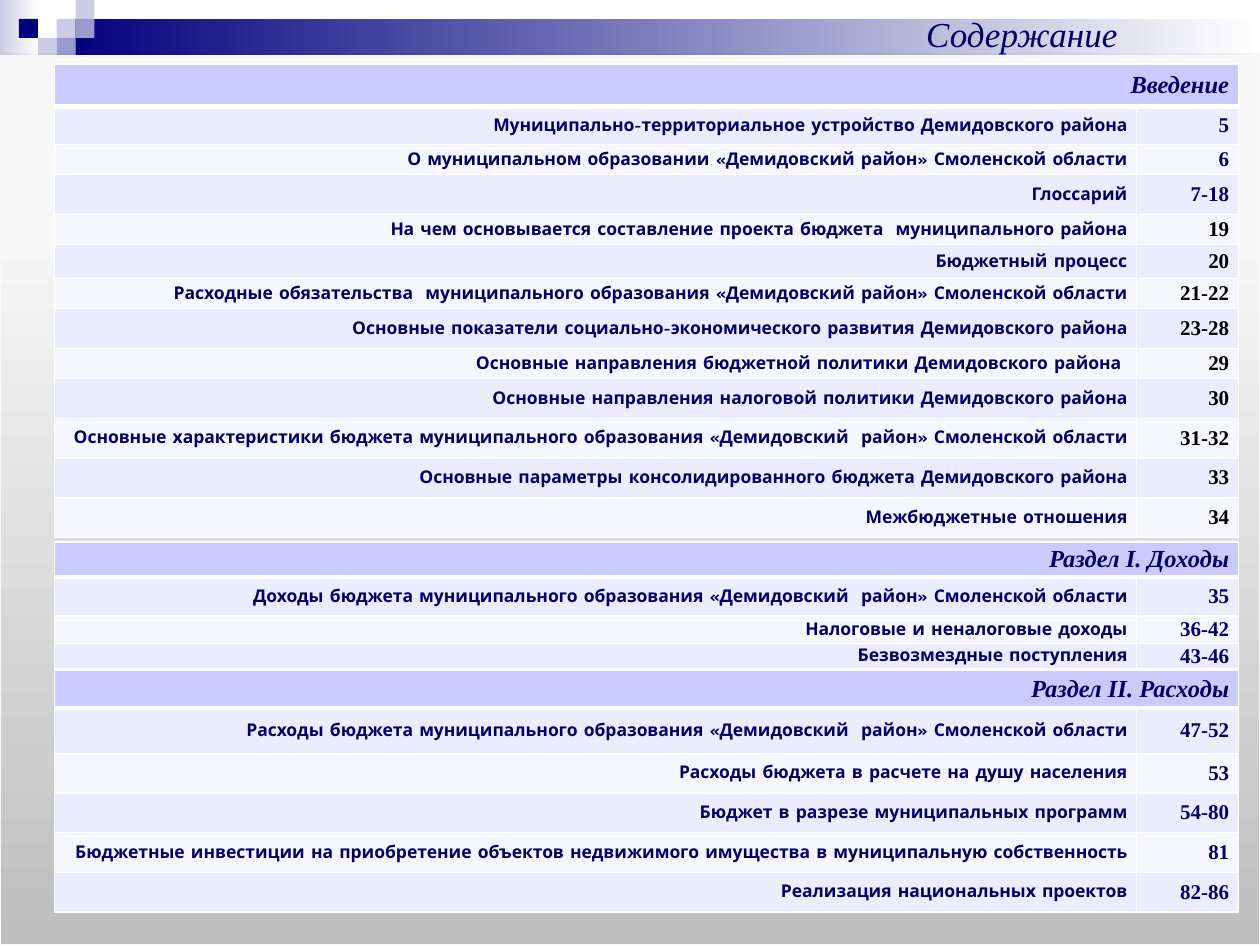
from lxml import etree
from pptx import Presentation
from pptx.dml.color import RGBColor
from pptx.enum import shapes, text
from pptx.oxml import parse_xml
from pptx.oxml.ns import nsdecls, qn
from pptx.util import Pt

NAVY, BLACK, WHITE = "000066", "000000", "FFFFFF"
SERIF, HAND = "Times New Roman", "Comic Neue"
HEADER, BANDS = "CACAFF", ("ECECFF", "F6F6FF")

INTRO = [
    ("Муниципально-территориальное устройство Демидовского района", "5", 21.6),
    ("О муниципальном образовании «Демидовский район» Смоленской области", "6", 17.3),
    ("Глоссарий", "7-18", 22.7),
    ("На чем основывается составление проекта бюджета  муниципального района", "19", 17.3),
    ("Бюджетный процесс", "20", 19.4),
    ("Расходные обязательства  муниципального образования «Демидовский район» "
     "Смоленской области", "21-22", 17.3),
    ("Основные показатели социально-экономического развития Демидовского района",
     "23-28", 22.7),
    ("Основные направления бюджетной политики Демидовского района ", "29", 17.3),
    ("Основные направления налоговой политики Демидовского района", "30", 22.7),
    ("Основные характеристики бюджета муниципального образования «Демидовский  район» "
     "Смоленской области", "31-32", 22.7),
    ("Основные параметры консолидированного бюджета Демидовского района", "33", 22.7),
    ("Межбюджетные отношения", "34", 22.7),
]
INCOME = [
    ("Доходы бюджета муниципального образования «Демидовский  район» Смоленской области",
     "35", 22.2),
    ("Налоговые и неналоговые доходы", "36-42", 15.8),
    ("Безвозмездные поступления", "43-46", 13.9),
]
SPENDING = [
    ("Расходы бюджета муниципального образования «Демидовский  район» Смоленской области",
     "47-52", 25.9),
    ("Расходы бюджета в расчете на душу населения", "53", 22.7),
    ("Бюджет в разрезе муниципальных программ", "54-80", 22.7),
    ("Бюджетные инвестиции на приобретение объектов недвижимого имущества "
     "в муниципальную собственность", "81", 22.7),
    ("Реализация национальных проектов", "82-86", 22.7),
]


def rgb(hex_color):
    return RGBColor.from_string(hex_color)


def add_run(p, words, size, font, color, bold=False, italic=False):
    r = p.add_run()
    r.text = words
    f = r.font
    f.size, f.name, f.bold, f.italic = Pt(size), font, bold, italic
    f.color.rgb = rgb(color)


def add_box(s, box, color=None, kind=shapes.MSO_SHAPE.RECTANGLE):
    sp = s.shapes.add_shape(kind, *map(Pt, box))
    sp.shadow.inherit = False
    sp.line.fill.background()
    if color:
        sp.fill.solid()
        sp.fill.fore_color.rgb = rgb(color)
    return sp


def fill_gradient(sp, stops, angle=0):
    sp.fill.gradient()
    sp.fill.gradient_angle = angle
    gs_list = sp._element.spPr.find(qn("a:gradFill")).find(qn("a:gsLst"))
    for gs in list(gs_list):
        gs_list.remove(gs)
    for pos, color in stops:
        gs = etree.SubElement(gs_list, qn("a:gs"), pos=str(pos * 1000))
        etree.SubElement(gs, qn("a:srgbClr"), val=color)


def banner(s, left, top, width, height):
    # Fading strips
    fill_gradient(add_box(s, (left, top, 22.3, height)), [(0, "CCCCE6"), (100, WHITE)])
    fill_gradient(add_box(s, (left + 32.4, top + 10.8, width - 32.4, 21.6)),
                  [(0, "00007D"), (100, WHITE)])
    # Mosaic squares: column, row, colour
    side = 10.8
    for col, row, color in [(3, 1, "CCCCE6"), (4, 0, "CCCCE6"), (4, 1, "9999CC"),
                            (2, 2, "CCCCE6"), (1, 1, "00007D"), (3, 2, "9999CC"),
                            (2, 3, "9999CC")]:
        add_box(s, (left + col * side, top + row * side, side, side), color)


def panel(s, *box):
    sp = add_box(s, box, kind=shapes.MSO_SHAPE.FLOWCHART_PROCESS)
    fill_gradient(sp, [(0, "BEBEBE"), (80, "F7F7F7"), (100, "F8F8F8")], 90)
    sp.line.color.rgb = rgb("F9F9F9")
    sp.line.width = Pt(0.75)
    # Soft shadow below
    effects = sp._element.spPr.find(qn("a:effectLst"))
    effects.append(parse_xml(
        f'<a:outerShdw {nsdecls("a")} blurRad="{Pt(3.1)}" dist="{Pt(1.8)}" dir="5400000" '
        'rotWithShape="0"><a:srgbClr val="000000"><a:alpha val="35000"/></a:srgbClr>'
        '</a:outerShdw>'))


def title(s, *box):
    tf = s.shapes.add_textbox(*map(Pt, box)).text_frame
    tf.word_wrap = True
    tf.auto_size = text.MSO_AUTO_SIZE.SHAPE_TO_FIT_TEXT
    p = tf.paragraphs[0]
    p.alignment = text.PP_ALIGN.CENTER
    add_run(p, "Содержание", 20, SERIF, NAVY, italic=True)


def style_cell(cell, color, top=1, bottom=1):
    cell.margin_left = cell.margin_right = Pt(5.4)
    cell.margin_top = cell.margin_bottom = 0
    cell.vertical_anchor = text.MSO_ANCHOR.MIDDLE
    cell.fill.solid()
    cell.fill.fore_color.rgb = rgb(color)
    # Borders precede the fill in the cell properties
    borders = [("L", 1), ("R", 1), ("T", top), ("B", bottom)]
    for i, (edge, width) in enumerate(borders):
        cell._tc.get_or_add_tcPr().insert(i, parse_xml(
            f'<a:ln{edge} {nsdecls("a")} w="{Pt(width)}"><a:solidFill>'
            f'<a:srgbClr val="{WHITE}"/></a:solidFill></a:ln{edge}>'))


def write_cell(cell, *run, **style):
    p = cell.text_frame.paragraphs[0]
    p.alignment = text.PP_ALIGN.RIGHT
    add_run(p, *run, bold=True, **style)


def section(s, left, top, width, heading, head_height, entries, black_pages=()):
    heights = [head_height] + [height for _, _, height in entries]
    table = s.shapes.add_table(len(heights), 2, Pt(left), Pt(top), Pt(width),
                               Pt(sum(heights))).table
    page_width = 58.3
    table.columns[0].width, table.columns[1].width = Pt(width - page_width), Pt(page_width)
    for row, height in zip(table.rows, heights):
        row.height = Pt(height)
    # Heading across both columns
    for cell in table.rows[0].cells:
        style_cell(cell, HEADER, bottom=3)
    table.cell(0, 0).merge(table.cell(0, 1))
    write_cell(table.cell(0, 0), heading, 14, SERIF, NAVY, italic=True)
    # Topics and pages
    for i, (topic, pages, _) in enumerate(entries):
        cells = table.cell(i + 1, 0), table.cell(i + 1, 1)
        for cell in cells:
            style_cell(cell, BANDS[i % 2], top=1 if i else 3)
        write_cell(cells[0], topic, 10, HAND, NAVY)
        write_cell(cells[1], pages, 12, SERIF, BLACK if i in black_pages else NAVY)


def main():
    prs = Presentation()
    prs.slide_width, prs.slide_height = Pt(720), Pt(540)
    s = prs.slides.add_slide(prs.slide_layouts[6])
    banner(s, 0, 0, 720, 41.8)
    panel(s, 0, 31.7, 720, 508.3)
    title(s, 450.7, 3.6, 266.4, 31.7)
    left, width = 31, 676.8
    section(s, left, 36.7, width, "Введение", 24.2, INTRO, range(3, 12))
    section(s, left, 309.6, width, "Раздел I. Доходы", 20.2, INCOME)
    section(s, left, 383, width, "Раздел II. Расходы", 21.6, SPENDING)
    prs.save("out.pptx")


if __name__ == "__main__":
    main()
